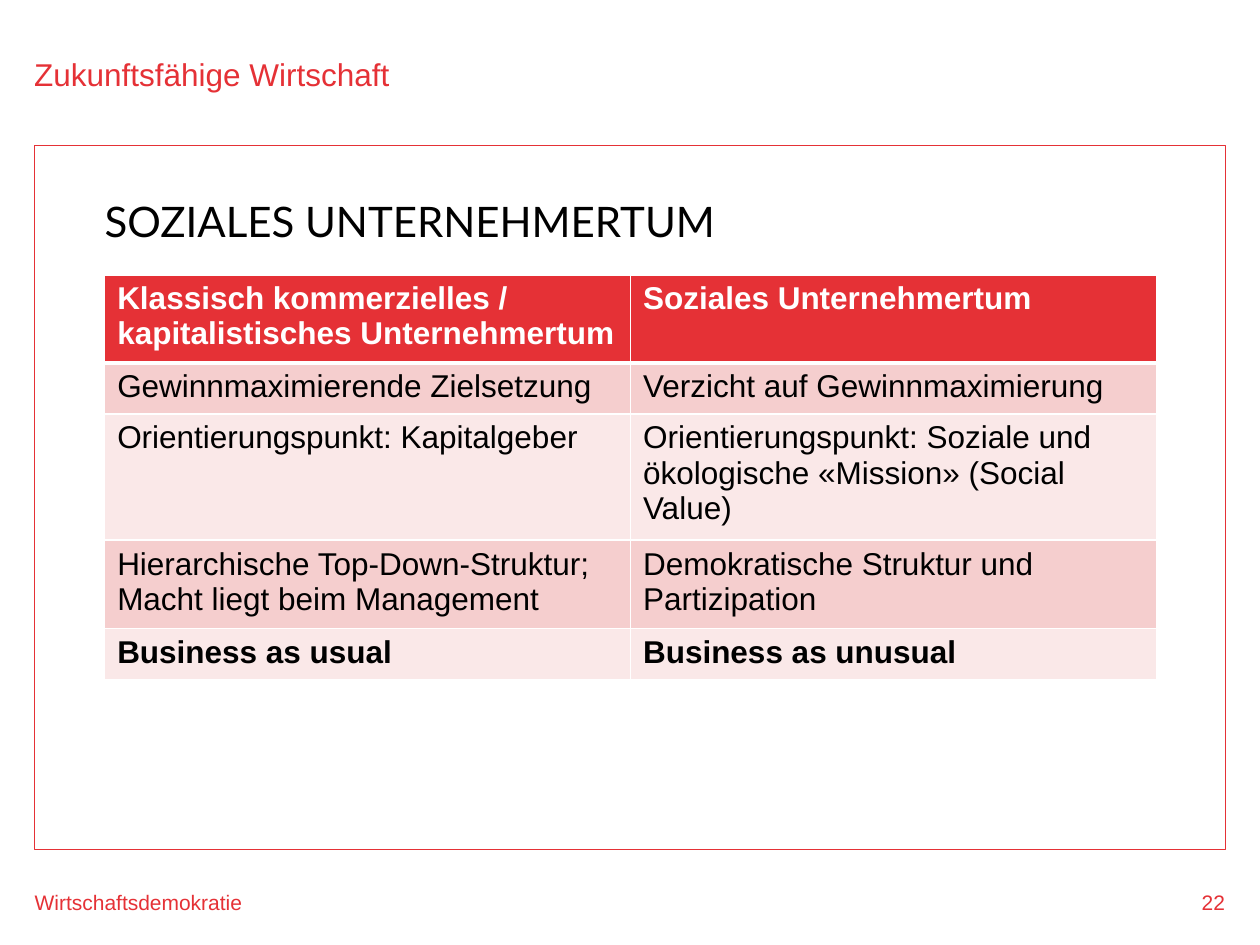
from lxml import etree
from pptx import Presentation
from pptx.dml.color import RGBColor
from pptx.enum.shapes import MSO_SHAPE
from pptx.enum.text import MSO_ANCHOR, PP_ALIGN
from pptx.oxml.ns import qn
from pptx.util import Pt

RED = RGBColor(0xE5, 0x31, 0x36)
ROSE = RGBColor(0xF5, 0xCE, 0xCE)
PALE_ROSE = RGBColor(0xFA, 0xE8, 0xE8)
BLACK = RGBColor(0, 0, 0)
WHITE = RGBColor(0xFF, 0xFF, 0xFF)
RECTANGLE = MSO_SHAPE.RECTANGLE
TOP = MSO_ANCHOR.TOP
LEFT, RIGHT = PP_ALIGN.LEFT, PP_ALIGN.RIGHT

ROWS = [
    ("Klassisch kommerzielles / kapitalistisches Unternehmertum",
     "Soziales Unternehmertum"),
    ("Gewinnmaximierende Zielsetzung", "Verzicht auf Gewinnmaximierung"),
    ("Orientierungspunkt: Kapitalgeber",
     "Orientierungspunkt: Soziale und ökologische «Mission» (Social Value)"),
    ("Hierarchische Top-Down-Struktur; Macht liegt beim Management",
     "Demokratische Struktur und Partizipation"),
    ("Business as usual", "Business as unusual"),
]
ROW_HEIGHT = 29.2


def add_span(para, text, size, color, font="Arial", bold=False):
    span = para.add_run()
    span.text = text
    span.font.name = font
    span.font.size = Pt(size)
    span.font.bold = bold
    span.font.color.rgb = color


def add_text(page, area, text, size, color, font="Arial", align=LEFT):
    box = page.shapes.add_textbox(*map(Pt, area))
    frame = box.text_frame
    frame.word_wrap = True
    frame.vertical_anchor = TOP
    frame.margin_left = frame.margin_right = 0
    frame.margin_top = frame.margin_bottom = 0
    para = frame.paragraphs[0]
    para.alignment = align
    add_span(para, text, size, color, font)


def add_frame(page, area):
    frame = page.shapes.add_shape(RECTANGLE, *map(Pt, area))
    frame.shadow.inherit = False
    frame.fill.background()
    frame.line.color.rgb = RED
    frame.line.width = Pt(0.5)


def set_borders(cell, top, bottom):
    properties = cell._tc.get_or_add_tcPr()
    widths = {"a:lnL": 1, "a:lnR": 1, "a:lnT": top, "a:lnB": bottom}
    for position, (tag, width) in enumerate(widths.items()):
        line = etree.Element(qn(tag), w=str(Pt(width)))
        fill = etree.SubElement(line, qn("a:solidFill"))
        etree.SubElement(fill, qn("a:srgbClr"), val=str(WHITE))
        properties.insert(position, line)


def add_comparison(page, left, top, width):
    height = ROW_HEIGHT * len(ROWS)
    table = page.shapes.add_table(
        len(ROWS), 2, Pt(left), Pt(top), Pt(width), Pt(height)).table
    for row_index, texts in enumerate(ROWS):
        table.rows[row_index].height = Pt(ROW_HEIGHT)
        header = row_index == 0
        bold = header or row_index == len(ROWS) - 1
        band = ROSE if row_index % 2 else PALE_ROSE
        for column_index, text in enumerate(texts):
            cell = table.cell(row_index, column_index)
            cell.fill.solid()
            cell.fill.fore_color.rgb = RED if header else band
            set_borders(cell, top=3 if row_index == 1 else 1,
                        bottom=3 if header else 1)
            add_span(cell.text_frame.paragraphs[0], text, 18,
                     WHITE if header else BLACK, bold=bold)


def main():
    deck = Presentation()
    deck.slide_width, deck.slide_height = Pt(720), Pt(540)
    page = deck.slides.add_slide(deck.slide_layouts[6])

    # Content frame, heading and table
    add_frame(page, (19.6, 83, 680.6, 402.5))
    add_text(page, (59.8, 111.6, 601, 39.6), "SOZIALES UNTERNEHMERTUM",
             24, BLACK, font="Lato")
    add_comparison(page, 59.8, 157, 601)

    # Footer
    add_text(page, (19.8, 508.3, 442, 17.3), "Wirtschaftsdemokratie", 12, RED)
    add_text(page, (672, 508.3, 28, 17.3), "22", 12, RED, align=RIGHT)

    # Chapter line
    add_text(page, (19.6, 31.7, 680.6, 28), "Zukunftsfähige Wirtschaft",
             18, RED)

    deck.save("out.pptx")


if __name__ == "__main__":
    main()
